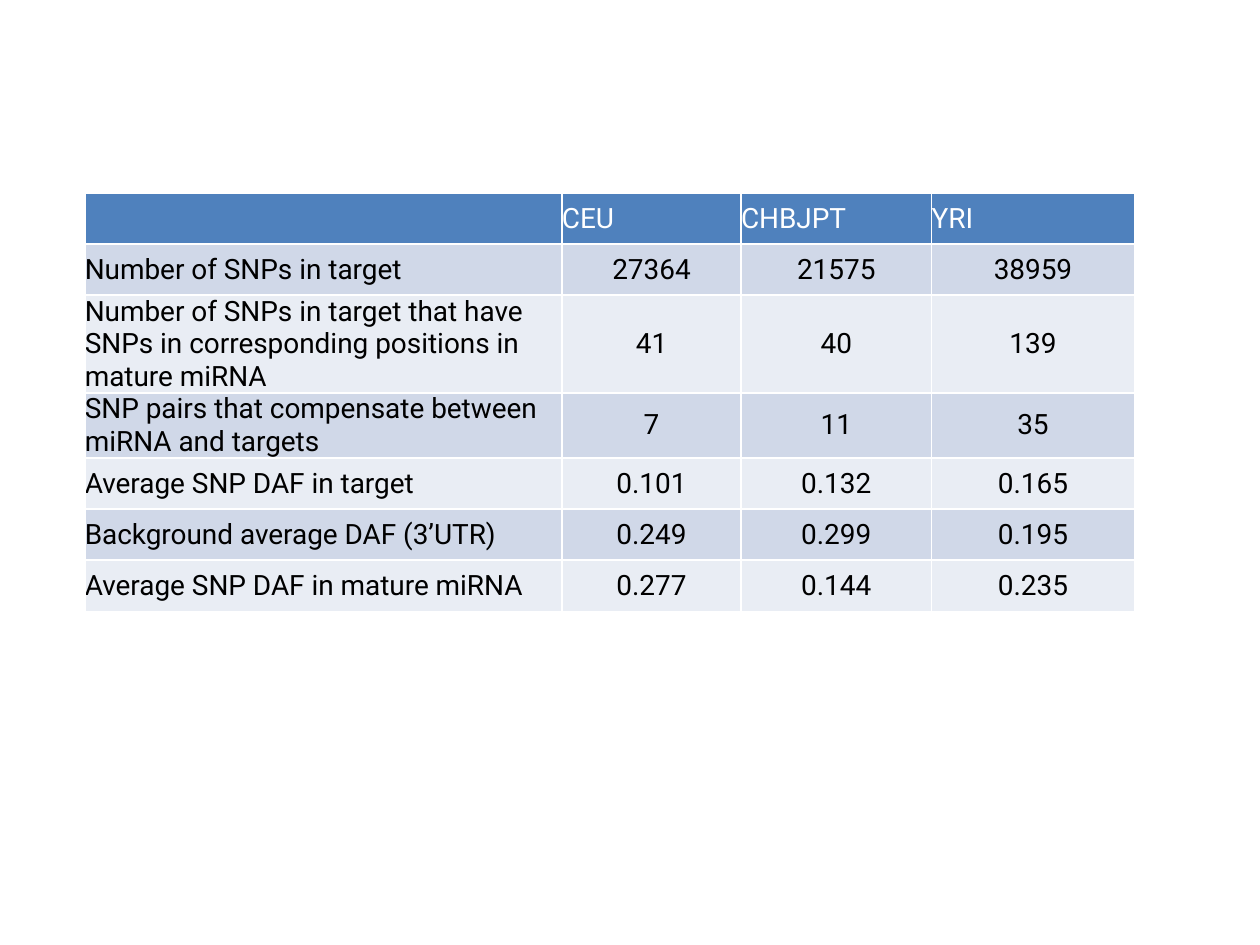
from pptx import Presentation
from pptx.dml.color import RGBColor
from pptx.enum.text import MSO_ANCHOR, PP_ALIGN
from pptx.util import Cm, Pt

LEFT, CENTER = PP_ALIGN.LEFT, PP_ALIGN.CENTER
MIDDLE = MSO_ANCHOR.MIDDLE
HEADER_FILL, BAND_FILLS = "4F81BD", ("E9EDF4", "D0D8E8")
COL_WIDTHS = (9.62, 3.61, 3.84, 4.09)
ROW_HEIGHT = 1.03

ROWS = [
    ("", "CEU", "CHBJPT", "YRI"),
    ("Number of SNPs in target", "27364", "21575", "38959"),
    ("Number of SNPs in target that have SNPs in corresponding positions in mature miRNA",
     "41", "40", "139"),
    ("SNP pairs that compensate between miRNA and targets", "7", "11", "35"),
    ("Average SNP DAF in target", "0.101", "0.132", "0.165"),
    ("Background average DAF (3’UTR)", "0.249", "0.299", "0.195"),
    ("Average SNP DAF in mature miRNA", "0.277", "0.144", "0.235"),
]


def color(value):
    return RGBColor.from_string(value)


prs = Presentation()
prs.slide_width, prs.slide_height = Cm(25.4), Cm(19.05)
s = prs.slides.add_slide(prs.slide_layouts[6])

# Table frame; its default style draws the white cell borders
table = s.shapes.add_table(
    len(ROWS), len(COL_WIDTHS), Cm(1.71), Cm(3.89),
    Cm(sum(COL_WIDTHS)), Cm(ROW_HEIGHT * len(ROWS))).table
for column, width in zip(table.columns, COL_WIDTHS):
    column.width = Cm(width)
for row in table.rows:
    row.height = Cm(ROW_HEIGHT)

# Header row, then banded rows with centred values
for i, texts in enumerate(ROWS):
    header = i == 0
    for j, text in enumerate(texts):
        cell = table.cell(i, j)
        cell.fill.solid()
        cell.fill.fore_color.rgb = color(HEADER_FILL if header else BAND_FILLS[i % 2])
        cell.margin_left = cell.margin_right = 0
        cell.margin_top = cell.margin_bottom = 0
        cell.vertical_anchor = MIDDLE
        cell.text = text
        p = cell.text_frame.paragraphs[0]
        p.alignment = LEFT if header or j == 0 else CENTER
        p.font.name = "Roboto"
        p.font.size = Pt(16)
        p.font.bold = False
        p.font.color.rgb = color("FFFFFF" if header else "000000")

prs.save("out.pptx")
